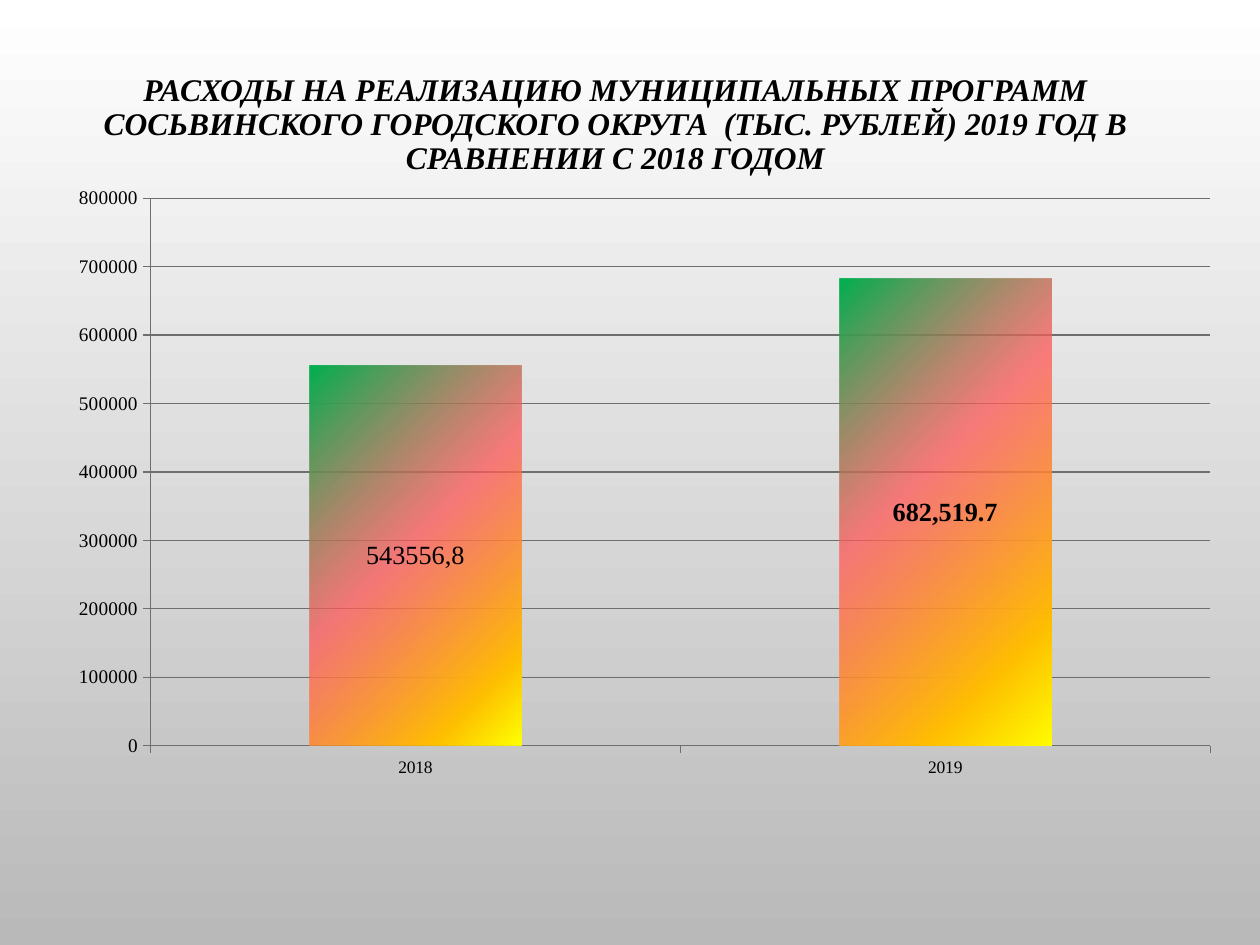
from dataclasses import dataclass

from lxml import etree
from pptx import Presentation
from pptx.chart import data as chart_data
from pptx.dml.color import RGBColor
from pptx.enum import chart as chart_enum, text
from pptx.oxml import ns, parse_xml
from pptx.util import Inches, Pt

BLACK = RGBColor(0x00, 0x00, 0x00)
WHITE = RGBColor(0xFF, 0xFF, 0xFF)
SILVER = RGBColor(0xB9, 0xB9, 0xB9)
GRAY = RGBColor(0x6E, 0x6E, 0x6E)
GREEN = RGBColor(0x00, 0xB0, 0x50)
CORAL = RGBColor(0xFF, 0x59, 0x59)
AMBER = RGBColor(0xFF, 0xC0, 0x00)
YELLOW = RGBColor(0xFF, 0xFF, 0x00)
LEMON = RGBColor(0xFF, 0xF2, 0x00)
SERIF = "Times New Roman"
TITLE = (
    "РАСХОДЫ НА РЕАЛИЗАЦИЮ МУНИЦИПАЛЬНЫХ ПРОГРАММ СОСЬВИНСКОГО "
    "ГОРОДСКОГО ОКРУГА  (ТЫС. РУБЛЕЙ) 2019 ГОД В СРАВНЕНИИ С 2018 ГОДОМ"
)


@dataclass(frozen=True)
class Stop:
    position: int
    color: RGBColor
    opacity: int = 100


@dataclass(frozen=True)
class Bar:
    year: str
    value: float
    stops: tuple[Stop, ...]


SERIES_STOPS = (Stop(0, LEMON), Stop(41, CORAL), Stop(70, AMBER), Stop(100, YELLOW))
BARS = (
    Bar("2018", 555696.7,
        (Stop(0, GREEN), Stop(47, CORAL, 75), Stop(85, AMBER), Stop(99, YELLOW))),
    Bar("2019", 682519.7,
        (Stop(0, GREEN), Stop(41, CORAL, 75), Stop(82, AMBER), Stop(100, YELLOW))),
)


def set_stops(gradient, stops: tuple[Stop, ...]) -> None:
    stop_list = gradient.find(ns.qn("a:gsLst"))
    for old_stop in list(stop_list):
        stop_list.remove(old_stop)
    for stop in stops:
        element = etree.SubElement(stop_list, ns.qn("a:gs"), pos=str(stop.position * 1000))
        color = etree.SubElement(element, ns.qn("a:srgbClr"), val=str(stop.color))
        if stop.opacity < 100:
            etree.SubElement(color, ns.qn("a:alpha"), val=str(stop.opacity * 1000))


def set_font(font, size: float, bold: bool = False) -> None:
    font.name = SERIF
    font.size = Pt(size)
    font.bold = bold
    font.color.rgb = BLACK


def style_axis(axis, size: float) -> None:
    set_font(axis.tick_labels.font, size)
    axis.major_tick_mark = chart_enum.XL_TICK_MARK.OUTSIDE
    axis.format.line.color.rgb = GRAY
    axis.format.line.width = Pt(0.75)


def set_plot_area(chart, x: float, y: float, width: float, height: float) -> None:
    plot_area = chart.plots[0]._element.getparent()
    for old_layout in plot_area.findall(ns.qn("c:layout")):
        plot_area.remove(old_layout)
    plot_area.insert(0, parse_xml(
        f'<c:layout {ns.nsdecls("c")}><c:manualLayout>'
        '<c:layoutTarget val="inner"/><c:xMode val="edge"/><c:yMode val="edge"/>'
        f'<c:x val="{x}"/><c:y val="{y}"/><c:w val="{width}"/><c:h val="{height}"/>'
        '</c:manualLayout></c:layout>'
    ))


def add_title(slide) -> None:
    title = slide.shapes.title
    title.left, title.top = Inches(0.12), Inches(0.68)
    title.width, title.height = Inches(9.53), Inches(0.63)
    frame = title.text_frame
    frame.text = TITLE
    frame.auto_size = text.MSO_AUTO_SIZE.NONE
    frame.vertical_anchor = text.MSO_ANCHOR.MIDDLE
    paragraph = frame.paragraphs[0]
    paragraph.alignment = text.PP_ALIGN.CENTER
    paragraph.line_spacing = 0.9
    font = paragraph.runs[0].font
    set_font(font, 18, bold=True)
    font.italic = True


def add_expense_chart(slide) -> None:
    expenses = chart_data.CategoryChartData()
    expenses.categories = [bar.year for bar in BARS]
    expenses.add_series("Series 1", [bar.value for bar in BARS])
    chart = slide.shapes.add_chart(
        chart_enum.XL_CHART_TYPE.COLUMN_STACKED,
        Inches(0.3), Inches(1.49), Inches(9.31), Inches(4.84), expenses,
    ).chart
    chart.has_title = False
    chart.has_legend = False
    chart.font.name = "Calibri"
    chart.font.size = Pt(18)
    chart.font.color.rgb = BLACK
    set_plot_area(chart, 0.096, 0.017, 0.904, 0.898)

    style_axis(chart.category_axis, 10)
    value_axis = chart.value_axis
    style_axis(value_axis, 11)
    value_axis.minimum_scale = 0
    value_axis.has_major_gridlines = True
    value_axis.major_gridlines.format.line.color.rgb = GRAY
    value_axis.major_gridlines.format.line.width = Pt(0.75)
    value_axis.tick_labels.number_format = "General"
    value_axis.tick_labels.number_format_is_linked = False

    plot = chart.plots[0]
    plot.gap_width = 150
    plot.overlap = 100
    plot.vary_by_categories = False
    series = plot.series[0]
    fills = [series.format.fill]
    fills += [series.points[index].format.fill for index in range(len(BARS))]
    for fill in fills:
        fill.gradient()
        fill.gradient_angle = 315
    gradients = list(series._element.iter(ns.qn("a:gradFill")))
    for gradient, stops in zip(gradients, [SERIES_STOPS, *(bar.stops for bar in BARS)]):
        set_stops(gradient, stops)

    labels = series.data_labels
    labels.show_value = True
    labels.number_format = "#,##0.0"
    labels.number_format_is_linked = False
    set_font(labels.font, 15, bold=True)
    first_label = series.points[0].data_label.text_frame
    first_label.text = "543556,8"
    set_font(first_label.paragraphs[0].runs[0].font, 15)


def main() -> None:
    presentation = Presentation()
    presentation.slide_width, presentation.slide_height = Inches(10), Inches(7.5)
    slide = presentation.slides.add_slide(presentation.slide_layouts[5])
    background = slide.background.fill
    background.gradient()
    background.gradient_angle = 270
    for stop, color in zip(background.gradient_stops, (WHITE, SILVER)):
        stop.color.rgb = color
    add_expense_chart(slide)
    add_title(slide)
    presentation.save("out.pptx")


if __name__ == "__main__":
    main()
